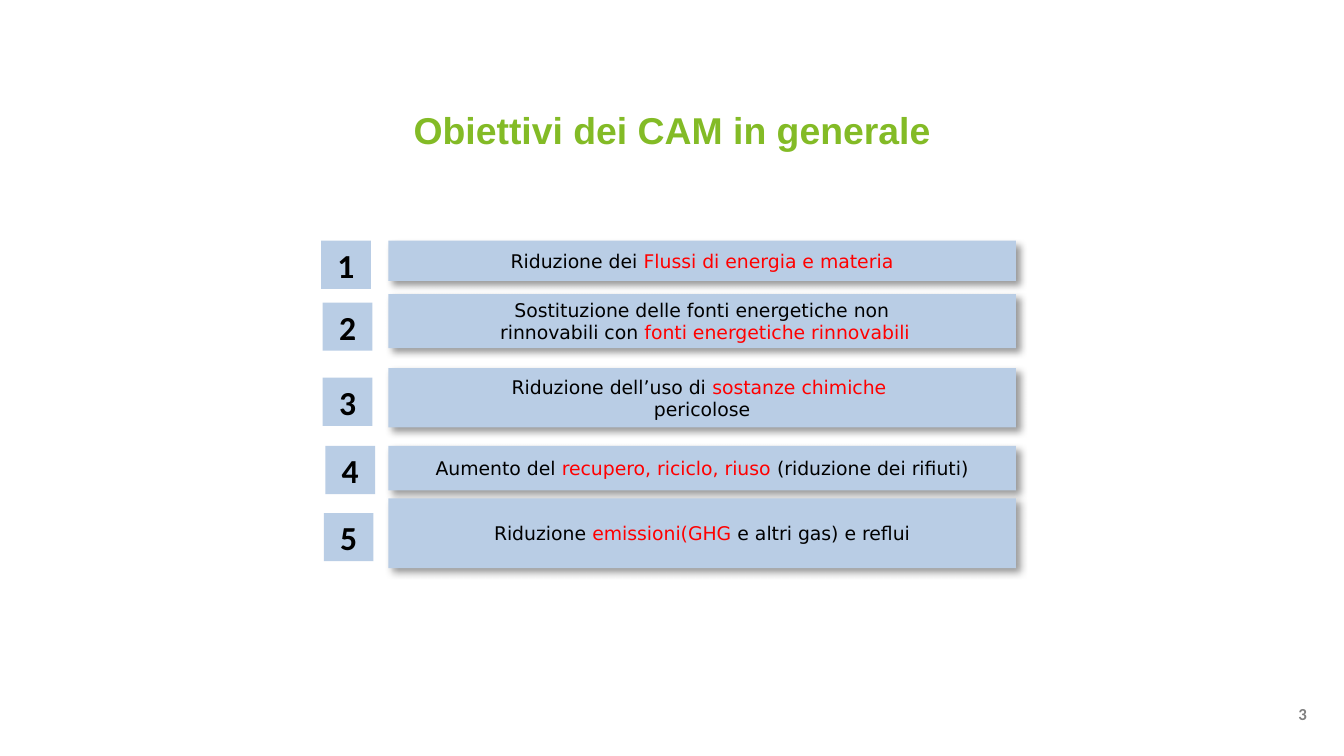
import pptx
import pptx.dml.color
import pptx.enum.shapes
import pptx.enum.text
import pptx.util
from lxml import etree
from pptx.oxml.ns import qn

Cm = pptx.util.Cm
ALIGN = pptx.enum.text.PP_ALIGN
ANCHOR = pptx.enum.text.MSO_ANCHOR
AUTO_SIZE = pptx.enum.text.MSO_AUTO_SIZE

PALE_BLUE, GREEN, GREY = "B9CDE5", "83BB26", "808080"
BLACK, RED = "000000", "FF0000"

BAR_LEFT, BAR_WIDTH = 7.34, 11.86
BADGE_WIDTH, BADGE_HEIGHT = 0.94, 0.91

# Each goal: bar top, bar height, badge left, badge top, lines of (text, colour)
GOALS = [
    (4.55, 0.76, 6.07, 4.55,
     [[("Riduzione dei ", BLACK), ("Flussi di energia e materia", RED)]]),
    (5.56, 1.02, 6.1, 5.72,
     [[("Sostituzione delle fonti energetiche non", BLACK)],
      [(" rinnovabili con ", BLACK), ("fonti energetiche rinnovabili", RED)]]),
    (6.96, 1.12, 6.1, 7.14,
     [[("Riduzione dell’uso di ", BLACK), ("sostanze chimiche ", RED)],
      [("pericolose", BLACK)]]),
    (8.43, 0.84, 6.15, 8.43,
     [[("Aumento del ", BLACK), ("recupero, riciclo, riuso ", RED),
       ("(riduzione dei rifiuti)", BLACK)]]),
    (9.42, 1.32, 6.12, 9.7,
     [[("Riduzione ", BLACK), ("emissioni(GHG", RED),
       (" e altri gas) e reflui", BLACK)]]),
]


def rgb(colour):
    return pptx.dml.color.RGBColor.from_string(colour)


def lengths(box):
    return [Cm(value) for value in box]


def format_font(font, name, size, colour, bold=False):
    font.name, font.size, font.bold = name, pptx.util.Pt(size), bold
    font.color.rgb = rgb(colour)


def add_panel(slide, box):
    panel = slide.shapes.add_shape(
        pptx.enum.shapes.MSO_SHAPE.RECTANGLE, *lengths(box))
    panel.fill.solid()
    panel.fill.fore_color.rgb = rgb(PALE_BLUE)
    panel.line.fill.background()
    panel.shadow.inherit = False
    return panel


def add_drop_shadow(panel):
    effects = panel._element.spPr.find(qn("a:effectLst"))
    shadow = etree.SubElement(effects, qn("a:outerShdw"), blurRad="50800",
                              dist="38100", dir="2700000", algn="tl",
                              rotWithShape="0")
    shade = etree.SubElement(shadow, qn("a:srgbClr"), val=BLACK)
    etree.SubElement(shade, qn("a:alpha"), val="40000")


def add_title(slide, box):
    title = slide.shapes.title
    title.left, title.top, title.width, title.height = lengths(box)
    frame = title.text_frame
    frame.text = "Obiettivi dei CAM in generale "
    frame.auto_size = AUTO_SIZE.NONE
    frame.vertical_anchor = ANCHOR.TOP
    frame.paragraphs[0].alignment = ALIGN.CENTER
    format_font(frame.paragraphs[0].runs[0].font, "Arial", 20, GREEN, True)


def add_goal_bar(slide, box, lines):
    bar = add_panel(slide, box)
    add_drop_shadow(bar)
    frame = bar.text_frame
    frame.word_wrap = False
    frame.vertical_anchor = ANCHOR.MIDDLE
    for index, line in enumerate(lines):
        paragraph = frame.add_paragraph() if index else frame.paragraphs[0]
        paragraph.alignment = ALIGN.CENTER
        for text, colour in line:
            run = paragraph.add_run()
            run.text = text
            format_font(run.font, "DejaVu Sans", 10.1, colour)


def add_badge(slide, box, number):
    frame = add_panel(slide, box).text_frame
    frame.text = str(number)
    frame.margin_left = frame.margin_right = Cm(0.15)
    frame.margin_top = frame.margin_bottom = Cm(0.08)
    frame.vertical_anchor = ANCHOR.TOP
    frame.auto_size = AUTO_SIZE.SHAPE_TO_FIT_TEXT
    frame.paragraphs[0].alignment = ALIGN.CENTER
    format_font(frame.paragraphs[0].runs[0].font, "Calibri", 18, BLACK, True)


def add_page_number(slide, box, number):
    frame = slide.shapes.add_textbox(*lengths(box)).text_frame
    frame.text = str(number)
    frame.word_wrap = True
    frame.vertical_anchor = ANCHOR.MIDDLE
    frame.paragraphs[0].alignment = ALIGN.RIGHT
    format_font(frame.paragraphs[0].runs[0].font, "Calibri", 9, GREY, True)


def main():
    presentation = pptx.Presentation()
    presentation.slide_width, presentation.slide_height = Cm(25.4), Cm(14.29)
    slide = presentation.slides.add_slide(presentation.slide_layouts[5])

    add_title(slide, (6.38, 1.9, 12.85, 0.89))

    # Numbered goals
    for number, goal in enumerate(GOALS, start=1):
        bar_top, bar_height, badge_left, badge_top, lines = goal
        add_goal_bar(slide, (BAR_LEFT, bar_top, BAR_WIDTH, bar_height), lines)
        add_badge(slide, (badge_left, badge_top, BADGE_WIDTH, BADGE_HEIGHT),
                  number)

    add_page_number(slide, (23.65, 13.11, 1.3, 0.76), 3)
    presentation.save("out.pptx")


if __name__ == "__main__":
    main()
